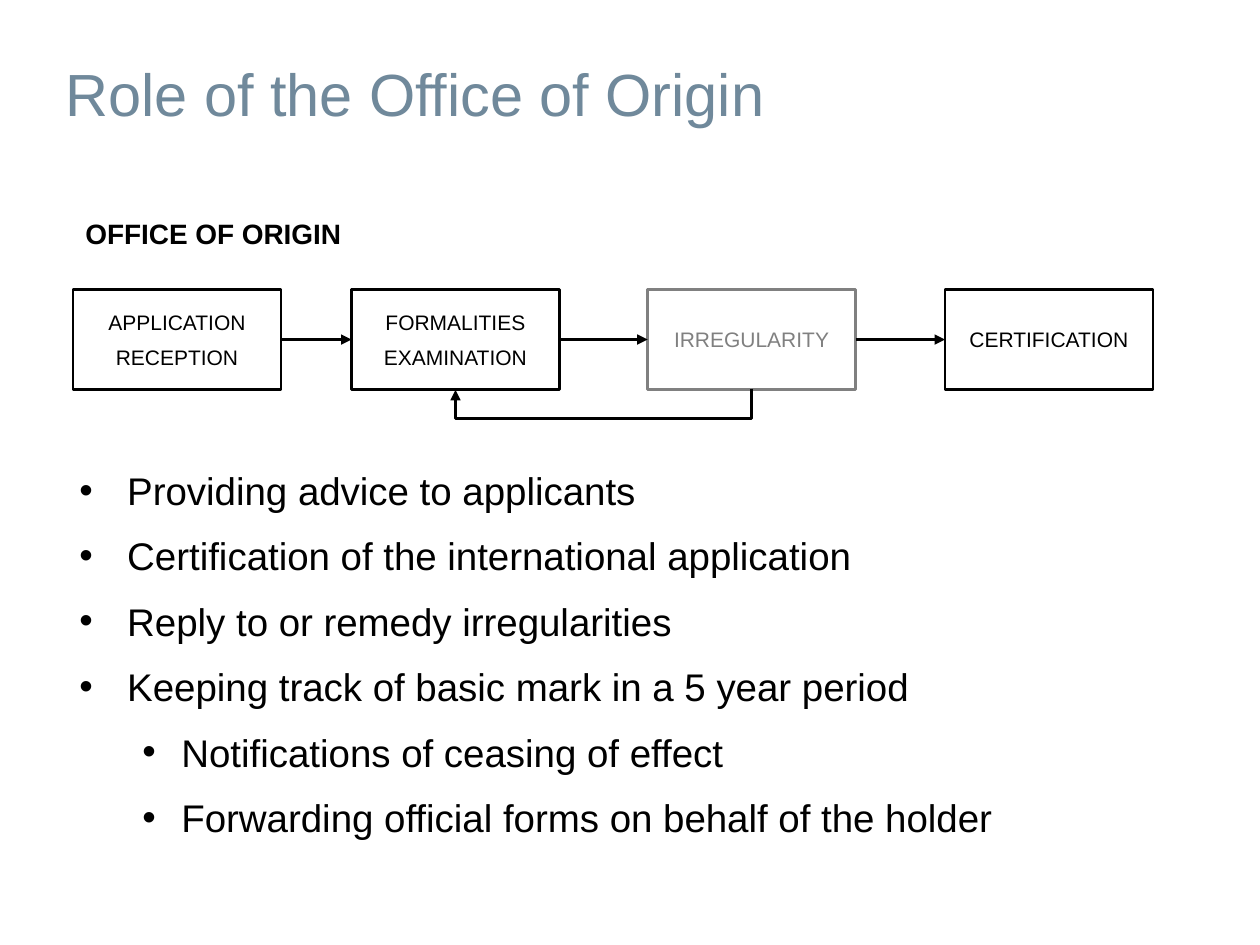
from dataclasses import dataclass

from lxml.etree import SubElement
from pptx import Presentation
from pptx.dml.color import RGBColor
from pptx.enum.shapes import MSO_CONNECTOR, MSO_SHAPE
from pptx.enum.text import MSO_ANCHOR, MSO_AUTO_SIZE, PP_ALIGN
from pptx.oxml.ns import qn
from pptx.util import Inches, Pt

# Content
TITLE = "Role of the Office of Origin"
LABEL = "OFFICE OF ORIGIN"
STEPS = [  # lines, left edge, colour name
    (["APPLICATION", "RECEPTION"], 0.58, "ink"),
    (["FORMALITIES", "EXAMINATION"], 2.79, "ink"),
    (["IRREGULARITY"], 5.14, "gray"),
    (["CERTIFICATION"], 7.5, "ink"),
]
TASKS = [  # text, level
    ("Providing advice to applicants", 0),
    ("Certification of the international application", 0),
    ("Reply to or remedy irregularities", 0),
    ("Keeping track of basic mark in a 5 year period", 0),
    ("Notifications of ceasing of effect", 1),
    ("Forwarding official forms on behalf of the holder", 1),
]


@dataclass(frozen=True)
class Theme:
    font: str = "Arial"
    ink: str = "000000"
    gray: str = "808080"
    blue: str = "70899B"
    head: int = 34
    body: int = 22
    label: int = 16
    step: int = 12
    line: float = 1.5


THEME = Theme()
INDENT = [(0.38, -0.38), (0.81, -0.31)]  # margin and hang for each level
TOP, WIDE, HIGH = 2.3, 1.65, 0.79  # row of boxes
DROP = 0.24  # depth of the return arrow below the boxes


def place(shape, x, y, w, h):
    shape.left, shape.top, shape.width, shape.height = map(Inches, (x, y, w, h))


def write(frame, lines, size, color=THEME.ink, bold=False, align=PP_ALIGN.LEFT,
          anchor=MSO_ANCHOR.TOP, wrap=True, gap=0, space=1, levels=None):
    """Fill a text frame with one paragraph for each line."""
    frame.auto_size = MSO_AUTO_SIZE.NONE
    frame.word_wrap, frame.vertical_anchor = wrap, anchor
    for i, text in enumerate(lines):
        para = frame.add_paragraph() if i else frame.paragraphs[0]
        if levels:
            para.level = levels[i]
            props = para._p.get_or_add_pPr()
            for key, val in zip(("marL", "indent"), INDENT[levels[i]]):
                props.set(key, str(Inches(val)))
            SubElement(props, qn("a:buFont"), typeface=THEME.font)
            SubElement(props, qn("a:buChar"), char="•")
        para.alignment, para.line_spacing = align, space
        para.space_before = Pt(gap if i else 0)
        run = para.add_run()
        run.text = text
        font = run.font
        font.name, font.size, font.bold = THEME.font, Pt(size), bold
        font.color.rgb = RGBColor.from_string(color)


def arrow(shapes, kind):
    """Add a black connector with a head at its end."""
    link = shapes.add_connector(kind, 0, 0, 0, 0)
    link.line.width = Pt(THEME.line)
    link.line.color.rgb = RGBColor.from_string(THEME.ink)
    SubElement(link.line._get_or_add_ln(), qn("a:tailEnd"), type="triangle")
    SubElement(link._element.spPr, qn("a:effectLst"))
    return link


def step(shapes, lines, left, tone):
    color = getattr(THEME, tone)
    box = shapes.add_shape(MSO_SHAPE.RECTANGLE, 0, 0, 0, 0)
    place(box, left, TOP, WIDE, HIGH)
    box.shadow.inherit = False
    box.fill.background()
    box.line.width = Pt(THEME.line)
    box.line.color.rgb = RGBColor.from_string(color)
    write(box.text_frame, lines, THEME.step, color, align=PP_ALIGN.CENTER,
          anchor=MSO_ANCHOR.MIDDLE, wrap=False, gap=6)
    return box


def loop(shapes, start, end):
    """Run an elbow arrow under the boxes, from one bottom centre to another."""
    link = arrow(shapes, MSO_CONNECTOR.ELBOW)
    thin, span = 0.01, start - end
    place(link, (start + end - thin) / 2, TOP + HIGH - span / 2, thin, span)
    link._element.spPr.find(qn("a:xfrm")).set("rot", "5400000")
    geom = link._element.spPr.find(qn("a:prstGeom"))
    guides = geom.find(qn("a:avLst"))
    if guides is None:
        guides = SubElement(geom, qn("a:avLst"))
    SubElement(guides, qn("a:gd"), name="adj1",
               fmla=f"val {round(DROP / thin * 100000)}")


def main():
    deck = Presentation()
    deck.slide_width, deck.slide_height = Inches(10), Inches(7.5)
    slide = deck.slides.add_slide(deck.slide_layouts[1])
    shapes = slide.shapes

    # Title and label
    place(shapes.title, 0.42, 0.3, 9, 0.87)
    write(shapes.title.text_frame, [TITLE], THEME.head, THEME.blue,
          anchor=MSO_ANCHOR.MIDDLE)
    label = shapes.add_textbox(0, 0, 0, 0)
    place(label, 0.58, 1.67, 2.24, 0.37)
    write(label.text_frame, [LABEL], THEME.label, bold=True, wrap=False)

    # Process row: boxes, arrows between neighbours, return arrow
    boxes = [step(shapes, *item) for item in STEPS]
    for a, b in zip(boxes, boxes[1:]):
        link = arrow(shapes, MSO_CONNECTOR.STRAIGHT)
        link.begin_connect(a, 3)
        link.end_connect(b, 1)
    loop(shapes, STEPS[2][1] + WIDE / 2, STEPS[1][1] + WIDE / 2)

    # Tasks
    body = slide.placeholders[1]
    place(body, 0.53, 3.58, 9.22, 3.39)
    texts, levels = zip(*TASKS)
    write(body.text_frame, texts, THEME.body, gap=5.75, space=1.2, levels=levels)

    deck.save("out.pptx")


if __name__ == "__main__":
    main()
